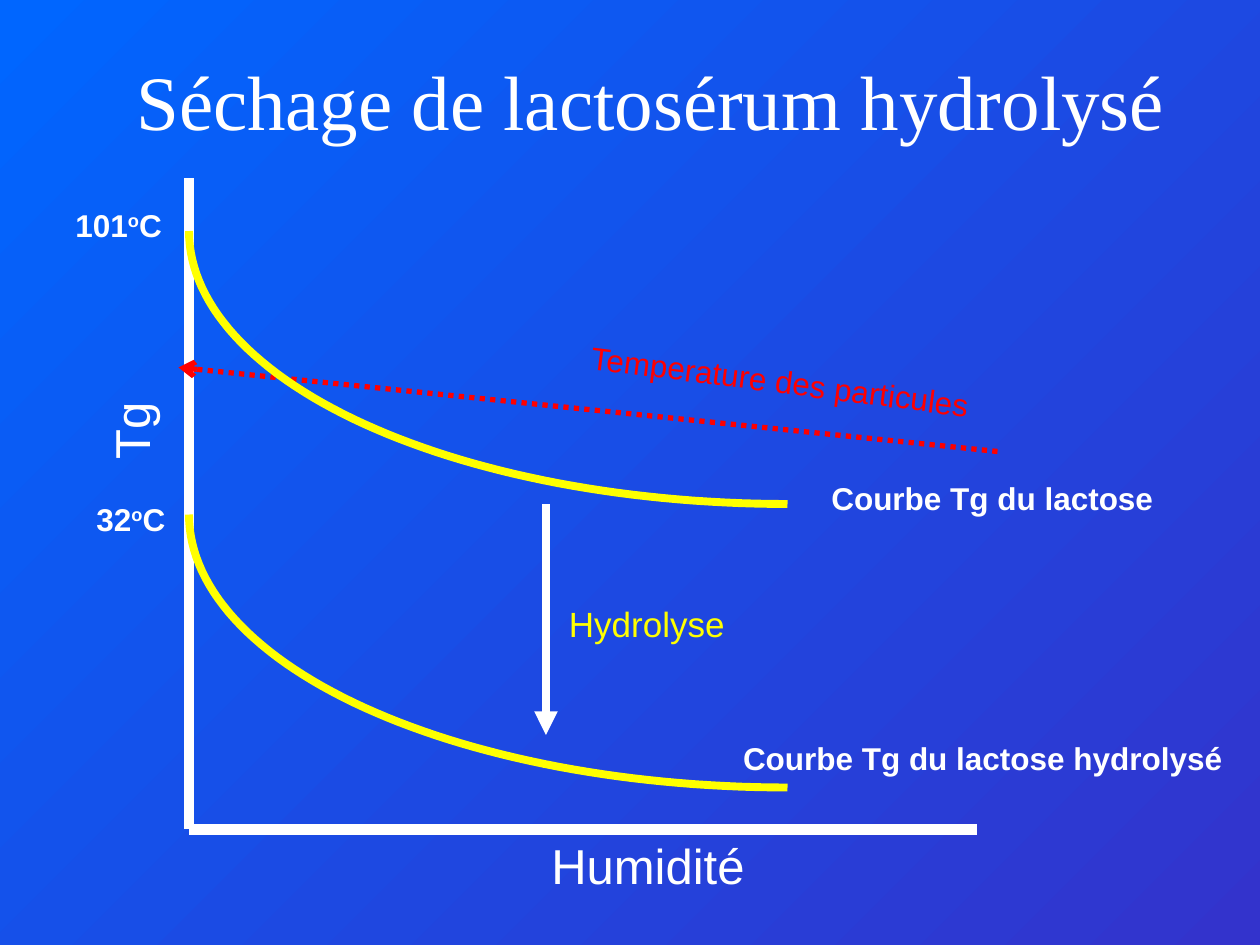
import math

from lxml import etree
from pptx import Presentation
from pptx.dml.color import RGBColor
from pptx.enum import dml, shapes, text
from pptx.oxml.ns import qn
from pptx.util import Pt

WHITE, YELLOW, RED = "FFFFFF", "FFFF00", "FF0000"
rgb = RGBColor.from_string


def add_line(x1, y1, x2, y2, color, width, head=None):
    """Draw a straight line, with an optional arrowhead at its end."""
    line = slide.shapes.add_connector(
        shapes.MSO_CONNECTOR.STRAIGHT, Pt(x1), Pt(y1), Pt(x2), Pt(y2))
    line.line.color.rgb = rgb(color)
    line.line.width = Pt(width)
    if head:
        etree.SubElement(line.line._get_or_add_ln(), qn("a:tailEnd"), type=head)
    etree.SubElement(line._element.spPr, qn("a:effectLst"))
    return line


def add_label(parts, x, y, w, h, size, color=WHITE, bold=False, turn=0, wrap=False):
    """Add a text box; every second part is superscript."""
    box = slide.shapes.add_textbox(Pt(x), Pt(y), Pt(w), Pt(h))
    box.rotation = turn
    frame = box.text_frame
    frame.word_wrap = wrap
    frame.auto_size = text.MSO_AUTO_SIZE.SHAPE_TO_FIT_TEXT
    para = frame.paragraphs[0]
    font = para.font
    font.name, font.size, font.bold = "Arial", Pt(size), bold
    font.color.rgb = rgb(color)
    for i, part in enumerate(parts):
        run = para.add_run()
        run.text = part
        if i % 2:
            run._r.get_or_add_rPr().set("baseline", "30000")


prs = Presentation()
prs.slide_width, prs.slide_height = Pt(720), Pt(540)
slide = prs.slides.add_slide(prs.slide_layouts[5])

# Background
fill = slide.background.fill
fill.gradient()
fill.gradient_angle = 315
for stop, color in zip(fill.gradient_stops, ("0066FF", "3333CC")):
    stop.color.rgb = rgb(color)

# Title
title = slide.shapes.title
title.left, title.top, title.width, title.height = Pt(66), Pt(12), Pt(612), Pt(90)
title.text_frame.text = "Séchage de lactosérum hydrolysé"
title.text_frame.vertical_anchor = text.MSO_ANCHOR.MIDDLE
para = title.text_frame.paragraphs[0]
para.alignment = text.PP_ALIGN.CENTER
para.font.name, para.font.size = "Times New Roman", Pt(44)
para.font.color.rgb = rgb(WHITE)

# Axes
left, base = 108, 474
add_line(left, 102, left, base, WHITE, 6)
add_line(left, base, 558, base, WHITE, 6)
add_label(["Humidité"], 308, base, 125, 41, 28)
add_label(["Tg"], 51, 225.5, 47.5, 41, 28, turn=270)

# Particle temperature
heat = add_line(570, 258, 102, 210, RED, 3, "arrow")
heat.line.dash_style = dml.MSO_LINE.ROUND_DOT
add_label(["Temperature des particules"], 330, 204, 241, 29, 18, RED, turn=7.4, wrap=True)

# Tg curves: the lower left quarter of an ellipse
wide, high, steps = 342, 156, 60
for top in (132, 294):
    points = []
    for i in range(steps + 1):
        angle = math.pi / 2 * i / steps
        points.append((Pt(left + wide * (1 - math.cos(angle))),
                       Pt(top + high * math.sin(angle))))
    pen = slide.shapes.build_freeform(*points[0])
    pen.add_line_segments(points[1:], close=False)
    curve = pen.convert_to_shape()
    curve.fill.background()
    curve.line.color.rgb = rgb(YELLOW)
    curve.line.width = Pt(4.5)
    curve.shadow.inherit = False

for parts, x, y, w in (
    (["101", "o", "C"], 36, 114, 65),
    (["32", "o", "C"], 48, 282, 55),
    (["Courbe Tg du lactose"], 468, 270, 199),
    (["Courbe Tg du lactose hydrolysé"], 417.5, 419, 289),
):
    add_label(parts, x, y, w, 29, 18, bold=True)

# Hydrolysis
add_line(312, 288, 312, 420, WHITE, 4.5, "triangle")
add_label(["Hydrolyse"], 318, 340.5, 104, 31, 20, YELLOW)

prs.save("out.pptx")
